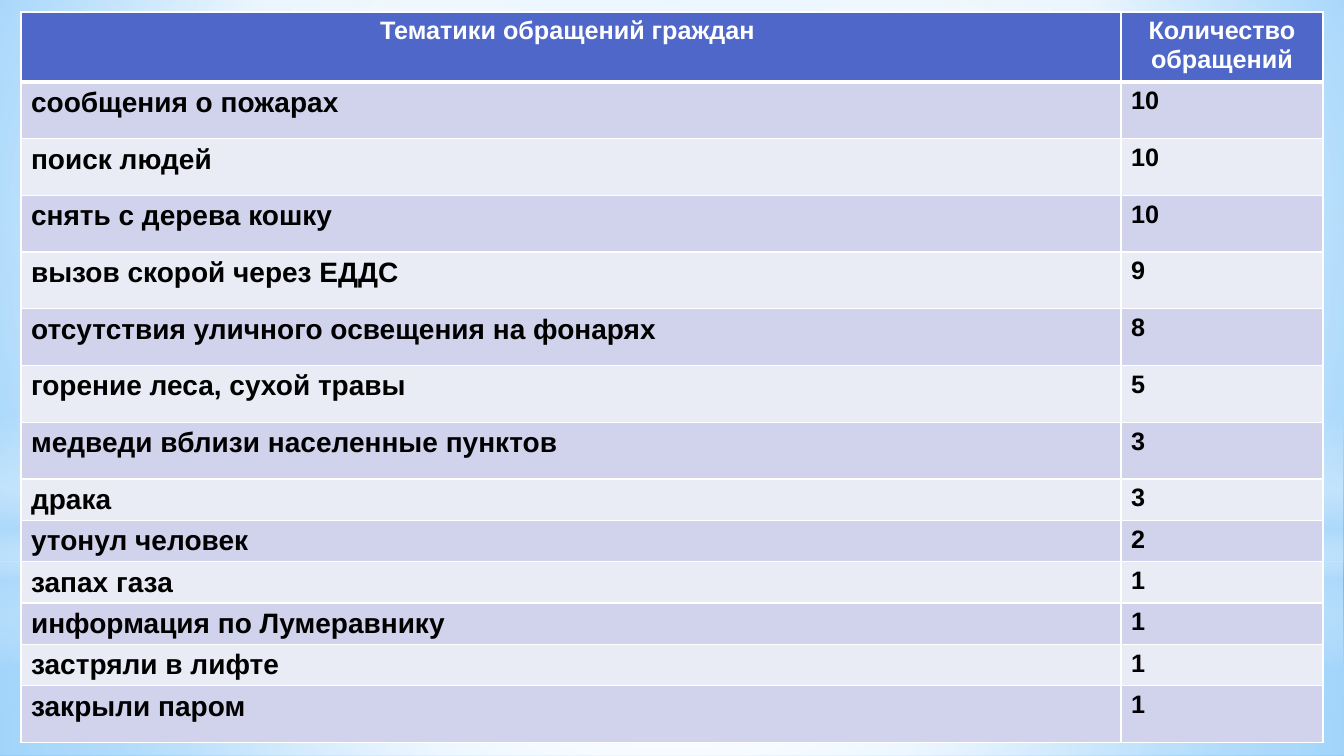
from lxml.etree import SubElement
from pptx import Presentation
from pptx.dml.color import RGBColor
from pptx.enum.shapes import MSO_SHAPE as Preset
from pptx.enum.text import PP_ALIGN as Align
from pptx.oxml.ns import qn
from pptx.util import Pt

HEADINGS = ("Тематики обращений граждан ", "Количество обращений")
APPEALS = [
    ("сообщения о пожарах", 10),
    ("поиск людей", 10),
    ("снять с дерева кошку", 10),
    ("вызов скорой через ЕДДС", 9),
    ("отсутствия уличного освещения на фонарях ", 8),
    ("горение леса, сухой травы", 5),
    ("медведи вблизи населенные пунктов", 3),
    ("драка", 3),
    ("утонул человек", 2),
    ("запах газа", 1),
    ("информация по Лумеравнику", 1),
    ("застряли в лифте", 1),
    ("закрыли паром", 1),
]

WHITE = RGBColor(0xFF, 0xFF, 0xFF)
BLACK = RGBColor(0, 0, 0)
HEADER_BLUE = RGBColor(0x4E, 0x67, 0xC8)
BANDS = (RGBColor(0xD0, 0xD3, 0xEB), RGBColor(0xE9, 0xEB, 0xF5))
HAZE = RGBColor(0xB4, 0xDC, 0xFA)
SKY_LIGHT = RGBColor(0x9E, 0xD5, 0xFF)
SKY_DEEP = RGBColor(0x5B, 0xB9, 0xFF)

FONT = "Arial"
PX = 914400 / 100.8
SLIDE_WIDTH, SLIDE_HEIGHT = 1344, 756
TABLE_LEFT, TABLE_TOP = 21, 12
COLUMN_WIDTHS = (1100, 202)
ROW_GROUPS = [(1, 70), (7, 397), (5, 207), (1, 57)]

CENTRE = (50, 50, 50, 50)
SKY = [(0, SKY_LIGHT, 100), (60, WHITE, 100), (100, SKY_DEEP, 100)]
SKY_FOCUS = (20, 10, 20, 60)
GLOWS = [
    (Preset.RECTANGLE, 562, 194, CENTRE,
     [(0, WHITE, 91), (37, WHITE, 76), (100, HAZE, 79)]),
    (Preset.RECTANGLE, 0, 562, CENTRE,
     [(0, WHITE, 89), (48, WHITE, 62), (100, HAZE, 79)]),
    (Preset.RECTANGLE, 415, 252, None,
     [(0, WHITE, 0), (29, WHITE, 30), (45, HAZE, 40),
      (55, WHITE, 26), (65, HAZE, 60), (100, WHITE, 0)]),
    (Preset.OVAL, 176, 562, CENTRE,
     [(0, WHITE, 100), (56, WHITE, 0)]),
]


def px(length):
    return round(length * PX)


def add_xml(parent, tag, **attributes):
    return SubElement(parent, qn(tag), {k: str(v) for k, v in attributes.items()})


def paint_gradient(fill, owner, stops, focus):
    fill.gradient()
    gradient = owner.xpath(".//a:gradFill")[0]
    gradient.clear()
    gradient.set("rotWithShape", "1")
    stop_list = add_xml(gradient, "a:gsLst")
    for position, color, opacity in stops:
        stop = add_xml(stop_list, "a:gs", pos=position * 1000)
        tint = add_xml(stop, "a:srgbClr", val=color)
        if opacity < 100:
            add_xml(tint, "a:alpha", val=opacity * 1000)
    if focus:
        circle = add_xml(gradient, "a:path", path="circle")
        left, top, right, bottom = (side * 1000 for side in focus)
        add_xml(circle, "a:fillToRect", l=left, t=top, r=right, b=bottom)
    else:
        add_xml(gradient, "a:lin", ang=5400000, scaled=0)


def add_borders(cell, top, bottom):
    properties = cell._tc.get_or_add_tcPr()
    sides = (("a:lnL", 1), ("a:lnR", 1), ("a:lnT", top), ("a:lnB", bottom))
    for index, (side, width) in enumerate(sides):
        border = add_xml(properties, side, w=Pt(width))
        add_xml(add_xml(border, "a:solidFill"), "a:srgbClr", val=WHITE)
        properties.insert(index, border)


def write_cell(cell, text, size, color, align):
    paragraph = cell.text_frame.paragraphs[0]
    paragraph.alignment = align
    paragraph.space_before = Pt(0)
    spacing = paragraph._p.pPr.find(qn("a:spcBef"))
    spacing.clear()
    add_xml(spacing, "a:spcPct", val=20000)
    run = paragraph.add_run()
    run.text = text
    run.font.name = FONT
    run.font.size = Pt(size)
    run.font.bold = True
    run.font.color.rgb = color


def add_background(slide):
    paint_gradient(slide.background.fill, slide.element, SKY, SKY_FOCUS)
    for preset, top, height, focus, stops in GLOWS:
        glow = slide.shapes.add_shape(preset, 0, px(top), px(SLIDE_WIDTH), px(height))
        glow.shadow.inherit = False
        glow.line.fill.background()
        paint_gradient(glow.fill, glow.element, stops, focus)


def add_appeals_table(slide):
    heights = [span / count for count, span in ROW_GROUPS for _ in range(count)]
    table = slide.shapes.add_table(
        len(heights), len(COLUMN_WIDTHS), px(TABLE_LEFT), px(TABLE_TOP),
        px(sum(COLUMN_WIDTHS)), px(sum(heights))).table
    for column, width in zip(table.columns, COLUMN_WIDTHS):
        column.width = px(width)
    for row, height in zip(table.rows, heights):
        row.height = px(height)

    for row_index, texts in enumerate([HEADINGS, *APPEALS]):
        is_header = row_index == 0
        for column_index, text in enumerate(texts):
            cell = table.cell(row_index, column_index)
            cell.fill.solid()
            cell.fill.fore_color.rgb = HEADER_BLUE if is_header else BANDS[(row_index - 1) % 2]
            add_borders(cell, 3 if row_index == 1 else 1, 3 if is_header else 1)
            write_cell(cell, str(text),
                       18 if is_header or column_index else 20,
                       WHITE if is_header else BLACK,
                       Align.CENTER if is_header else Align.LEFT)


def main():
    deck = Presentation()
    deck.slide_width, deck.slide_height = px(SLIDE_WIDTH), px(SLIDE_HEIGHT)
    slide = deck.slides.add_slide(deck.slide_layouts[6])
    add_background(slide)
    add_appeals_table(slide)
    deck.save("out.pptx")


if __name__ == "__main__":
    main()
